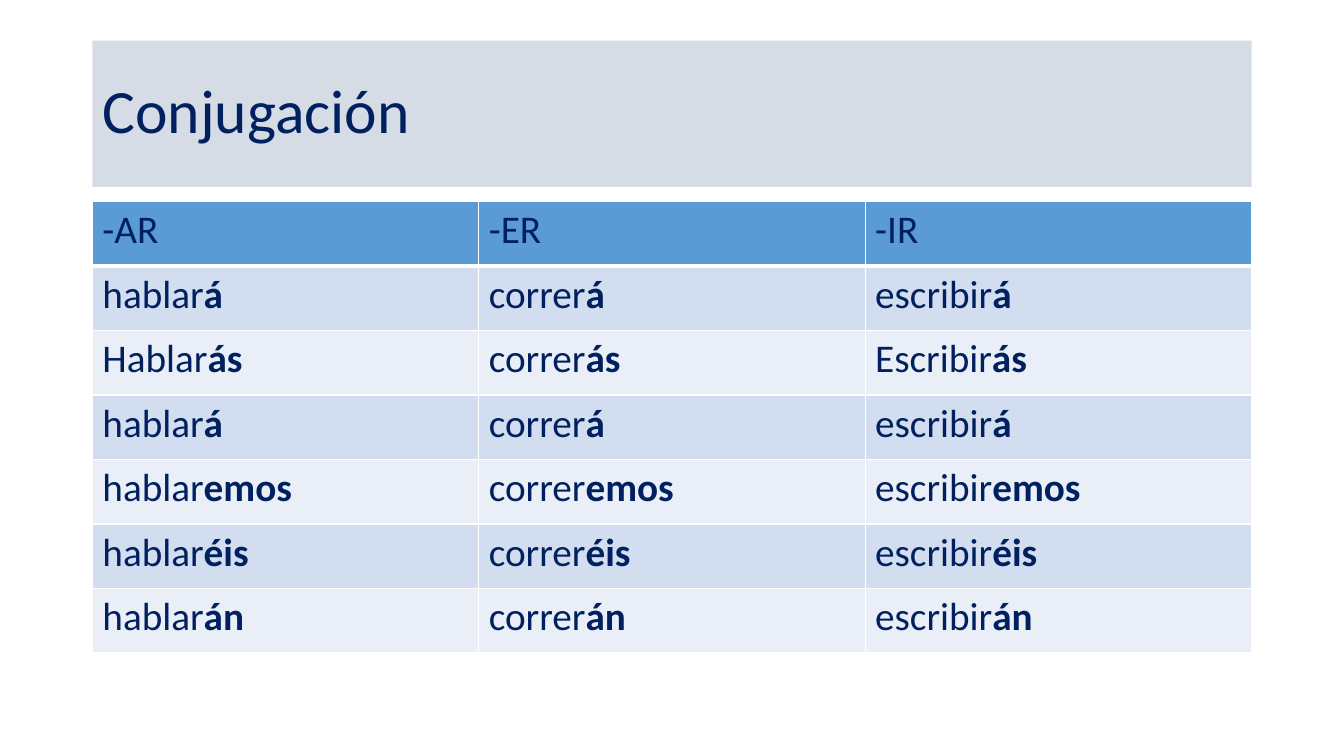
from dataclasses import dataclass

from lxml.etree import SubElement as Sub
from pptx import Presentation
from pptx.dml.color import RGBColor as Rgb
from pptx.enum.text import MSO_ANCHOR as Anchor, PP_ALIGN as Align
from pptx.oxml.ns import qn
from pptx.util import Pt

PX = 6350  # EMU in one px, 144 px to the inch


@dataclass(frozen=True)
class Theme:
    font: str = "Calibri"
    ink: str = "002060"
    panel: str = "D6DCE5"
    head: str = "5B9BD5"
    bands: tuple = ("D2DEEF", "EAEFF7")
    rule: str = "FFFFFF"
    title: int = 44
    cell: int = 28


THEME = Theme()
STEMS = ("hablar", "correr", "escribir")
ENDS = ("á", "ás", "á", "emos", "éis", "án")
CAPS = {("hablar", "ás"), ("escribir", "ás")}  # forms with a capital


def emu(*sizes):
    return [size * PX for size in sizes]


def apply(item, form):
    for name, value in form.items():
        setattr(item, name, value)


def paint(item, color):
    item.fill.solid()
    item.fill.fore_color.rgb = Rgb.from_string(color)


def write(para, text, size, bold=False):
    run = para.add_run()
    run.text = text
    apply(run.font, {"name": THEME.font, "size": Pt(size), "bold": bold})
    run.font.color.rgb = Rgb.from_string(THEME.ink)


def edge(cell, base):
    props = cell._tc.get_or_add_tcPr()
    for side, width in (("L", 1), ("R", 1), ("T", 1), ("B", base)):
        line = Sub(props, qn(f"a:ln{side}"), w=str(Pt(width)))
        fill = Sub(line, qn("a:solidFill"))
        Sub(fill, qn("a:srgbClr"), val=THEME.rule)


# Title band
def banner(slide, text, box):
    shape = slide.shapes.title
    apply(shape, dict(zip(("left", "top", "width", "height"), emu(*box))))
    paint(shape, THEME.panel)
    apply(shape.text_frame, {"vertical_anchor": Anchor.MIDDLE, "word_wrap": True})
    para = shape.text_frame.paragraphs[0]
    apply(para, {"alignment": Align.LEFT, "line_spacing": 0.9})
    write(para, text, THEME.title)


# Table of verb forms: each cell is a list of (text, bold) parts
def grid(slide, box):
    rows = [[[(f"-{stem[-2:].upper()}", False)] for stem in STEMS]]
    for end in ENDS:
        rows.append([
            [(stem.capitalize() if (stem, end) in CAPS else stem, False), (end, True)]
            for stem in STEMS
        ])
    table = slide.shapes.add_table(len(rows), len(STEMS), *emu(*box)).table
    apply(table, {"first_row": False, "horz_banding": False})
    for y, row in enumerate(rows):
        for x, parts in enumerate(row):
            cell = table.cell(y, x)
            edge(cell, 1 if y else 3)
            paint(cell, THEME.bands[(y - 1) % 2] if y else THEME.head)
            for text, bold in parts:
                write(cell.text_frame.paragraphs[0], text, THEME.cell, bold)


# Slide: a band above a table of the same width
def lesson(deck, box):
    left, top, width, height = box
    slide = deck.slides.add_slide(deck.slide_layouts[5])
    banner(slide, "Conjugación", (left, top, width, 209))
    grid(slide, (left, top + 230, width, height - 230))


def main():
    deck = Presentation()
    apply(deck, dict(zip(("slide_width", "slide_height"), emu(1920, 1080))))
    lesson(deck, (132, 58, 1656, 875))
    deck.save("out.pptx")


if __name__ == "__main__":
    main()
